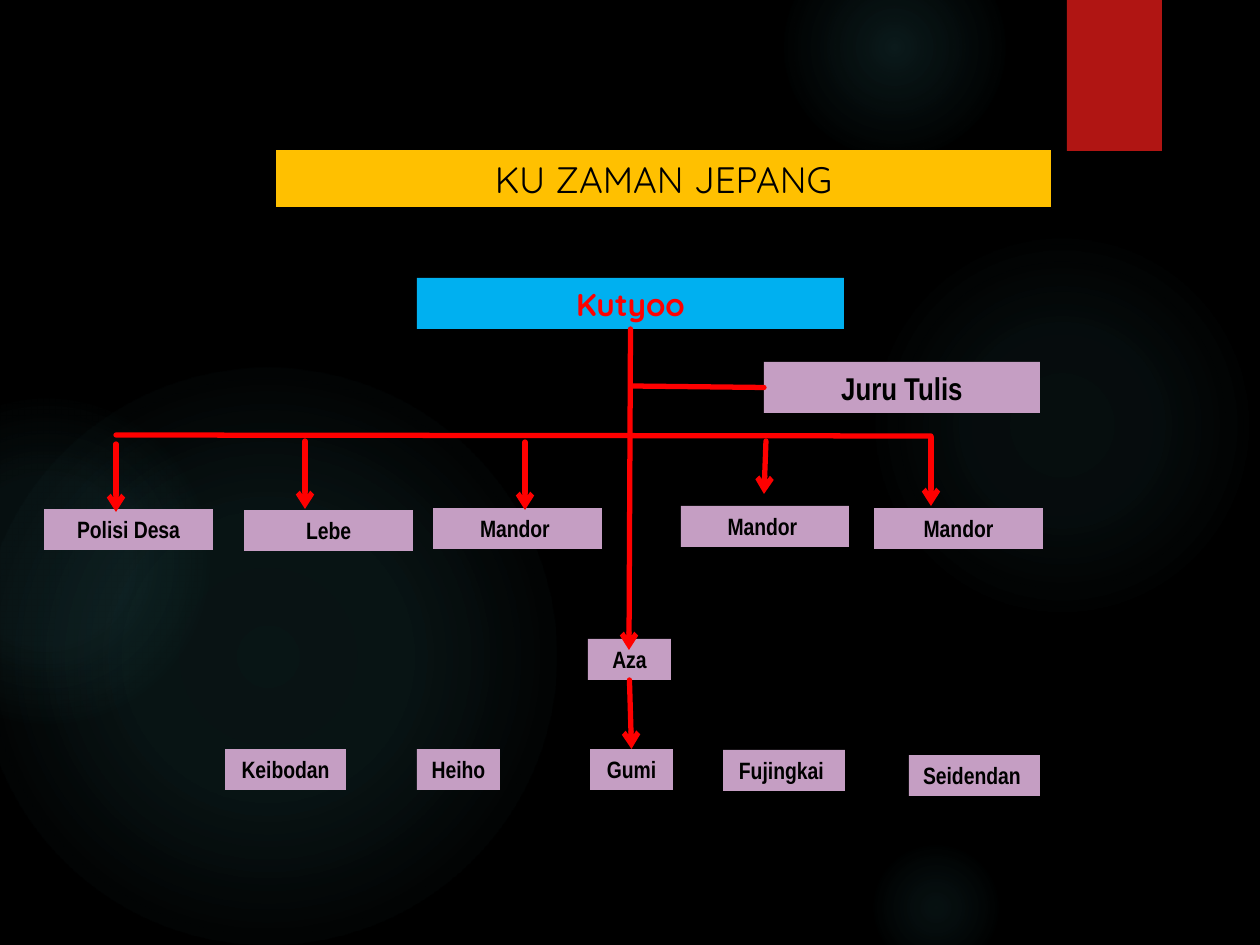
from lxml import etree
from pptx import Presentation
from pptx.dml.color import RGBColor
from pptx.enum.shapes import MSO_CONNECTOR, MSO_SHAPE
from pptx.enum.text import MSO_ANCHOR, PP_ALIGN
from pptx.oxml import parse_xml
from pptx.oxml.ns import nsdecls, qn
from pptx.util import Emu, Pt

RECTANGLE, OVAL = MSO_SHAPE.RECTANGLE, MSO_SHAPE.OVAL
STRAIGHT = MSO_CONNECTOR.STRAIGHT
CENTER, MIDDLE = PP_ALIGN.CENTER, MSO_ANCHOR.MIDDLE
TOP, LEFT, BOTTOM = 0, 1, 2
EMU_PER_PX = 914400 / 126
COLORS = {
    "background": "000000", "glow": "50B9C1", "ribbon": "B01513",
    "title": "FFC000", "chief": "00B0F0", "post": "C59EC3",
    "line": "FF0000", "red": "FF0000", "black": "000000",
}


def px(*lengths):
    return [Emu(round(length * EMU_PER_PX)) for length in lengths]


def add_box(place, fill, text="", size=13.5, font="Arial Narrow", color="black", bold=True):
    box = page.shapes.add_shape(RECTANGLE, *px(*place))
    box.shadow.inherit = False
    box.fill.solid()
    box.fill.fore_color.rgb = RGBColor.from_string(COLORS[fill])
    box.line.fill.background()
    if text:
        frame = box.text_frame
        frame.word_wrap = True
        frame.vertical_anchor = MIDDLE
        frame.margin_left, frame.margin_right, frame.margin_top, frame.margin_bottom = px(9, 9, 5, 5)
        para = frame.paragraphs[0]
        para.alignment = CENTER
        span = para.add_run()
        span.text = text
        span.font.name = font
        span.font.size = Pt(size)
        span.font.bold = bold
        span.font.color.rgb = RGBColor.from_string(COLORS[color])
    return box


deck = Presentation()
deck.slide_width, deck.slide_height = px(1260, 945)
page = deck.slides.add_slide(deck.slide_layouts[6])
page.background.fill.solid()
page.background.fill.fore_color.rgb = RGBColor.from_string(COLORS["background"])

# Soft glows: left, top, diameter, then (position, opacity) stops in percent
glows = [
    (868, 231, 388, [(0, 7), (36, 6), (69, 0)]),
    (784, -63, 221, [(0, 14), (36, 7), (73, 0)]),
    (868, 840, 136, [(0, 9), (36, 5), (66, 0)]),
    (-21, 368, 577, [(0, 11), (36, 10), (75, 0)]),
    (-116, 399, 325, [(0, 8), (36, 8), (72, 0)]),
]
for left, top, diameter, stops in glows:
    glow = page.shapes.add_shape(OVAL, *px(left, top, diameter, diameter))
    glow.shadow.inherit = False
    glow.line.fill.background()
    glow.fill.background()
    stop_xml = "".join(
        f'<a:gs pos="{position * 1000}"><a:srgbClr val="{COLORS["glow"]}">'
        f'<a:alpha val="{opacity * 1000}"/></a:srgbClr></a:gs>'
        for position, opacity in stops
    )
    gradient = parse_xml(
        f'<a:gradFill {nsdecls("a")} rotWithShape="1"><a:gsLst>{stop_xml}</a:gsLst>'
        '<a:path path="circle"><a:fillToRect l="50000" t="50000" r="50000" b="50000"/>'
        "</a:path></a:gradFill>"
    )
    properties = glow.element.spPr
    properties.replace(properties.find(qn("a:noFill")), gradient)

add_box((1067, 0, 95, 151), "ribbon")
add_box((276, 150, 775, 57), "title", "KU ZAMAN JEPANG", 21, "Quicksand", bold=False)
chief = add_box((417, 278, 427, 51), "chief", "Kutyoo", 18, "Quicksand", "red")
clerk = add_box((764, 362, 276, 51), "post", "Juru Tulis", 18)

posts = [
    ("Polisi Desa", 44, 509, 169),
    ("Lebe", 244, 510, 169),
    ("Mandor ", 433, 508, 169),
    ("Mandor ", 681, 506, 168),
    ("Mandor", 874, 508, 169),
    ("Keibodan", 225, 749, 121),
    ("Heiho", 417, 749, 83),
    ("Fujingkai ", 723, 750, 122),
    ("Seidendan ", 909, 755, 131),
]
for name, left, top, width in posts:
    add_box((left, top, width, 41), "post", name)
hamlet = add_box((588, 639, 83, 41), "post", "Aza")
group = add_box((590, 749, 83, 41), "post", "Gumi")

# Start and end points, arrowhead, joined start (box, side), joined end (box, side)
links = [
    ((631, 386, 764, 388), False, None, (clerk, LEFT)),
    ((631, 329, 629, 650), True, (chief, BOTTOM), None),
    ((116, 435, 931, 436), False, None, None),
    ((931, 437, 931, 506), True, None, None),
    ((305, 441, 305, 509), True, None, None),
    ((629, 680, 629, 749), True, (hamlet, BOTTOM), (group, TOP)),
    ((766, 441, 764, 494), True, None, None),
    ((116, 444, 116, 512), True, None, None),
    ((525, 442, 525, 510), True, None, None),
]
for ends, has_arrow, start, finish in links:
    link = page.shapes.add_connector(STRAIGHT, *px(*ends))
    if start:
        link.begin_connect(*start)
    if finish:
        link.end_connect(*finish)
    link.line.width = Pt(3)
    link.line.color.rgb = RGBColor.from_string(COLORS["line"])
    properties = link.element.spPr
    outline = properties.find(qn("a:ln"))
    outline.set("cap", "rnd")
    if has_arrow:
        etree.SubElement(outline, qn("a:tailEnd"), type="arrow")
    etree.SubElement(properties, qn("a:effectLst"))

deck.save("out.pptx")
